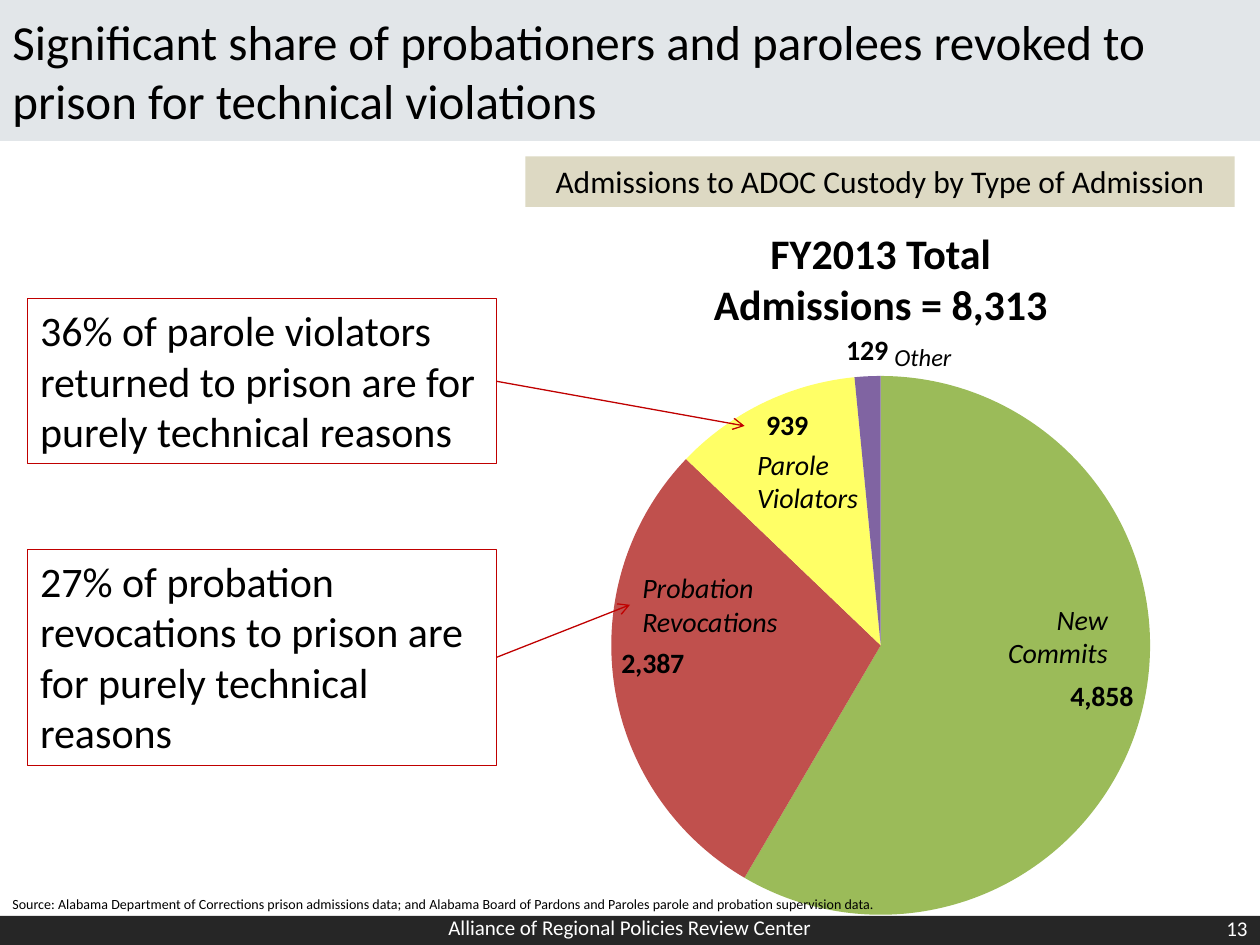
from dataclasses import dataclass
from typing import Optional

import pptx
import pptx.chart.data
import pptx.dml.color
import pptx.enum.chart
import pptx.enum.shapes
import pptx.enum.text
import pptx.oxml
import pptx.oxml.ns
import pptx.util

Pt = pptx.util.Pt
ALIGN = pptx.enum.text.PP_ALIGN
ANCHOR = pptx.enum.text.MSO_ANCHOR
LABEL = pptx.enum.chart.XL_LABEL_POSITION

FONT = "Calibri"
BLACK, WHITE, RED = "000000", "FFFFFF", "C00000"


@dataclass
class Block:
    text: str
    left: float
    top: float
    width: float
    height: float
    size: float
    color: str = BLACK
    bold: bool = False
    italic: bool = False
    align: ALIGN = ALIGN.LEFT
    anchor: ANCHOR = ANCHOR.TOP
    fill: Optional[str] = None
    line: Optional[str] = None
    grow: bool = True
    space_after: float = 0


@dataclass
class Callout:
    block: Block
    tip_x: float
    tip_y: float


@dataclass
class Slice:
    value: int
    color: str
    position: LABEL = LABEL.INSIDE_END


def rgb(color: str) -> pptx.dml.color.RGBColor:
    return pptx.dml.color.RGBColor.from_string(color)


def add_rectangle(page, left: float, top: float, width: float, height: float,
                  fill: Optional[str], line: Optional[str] = None):
    box = page.shapes.add_shape(pptx.enum.shapes.MSO_SHAPE.RECTANGLE,
                                Pt(left), Pt(top), Pt(width), Pt(height))
    box.shadow.inherit = False
    if fill:
        box.fill.solid()
        box.fill.fore_color.rgb = rgb(fill)
    else:
        box.fill.background()
    if line:
        box.line.color.rgb = rgb(line)
        box.line.width = Pt(0.75)
    else:
        box.line.fill.background()
    return box


def style_font(font, size: float, color: str, bold: bool, italic: bool = False) -> None:
    font.name = FONT
    font.size = Pt(size)
    font.bold = bold
    font.italic = italic
    font.color.rgb = rgb(color)


def add_block(page, block: Block):
    place = (block.left, block.top, block.width, block.height)
    if block.fill or block.line:
        box = add_rectangle(page, *place, block.fill, block.line)
    else:
        box = page.shapes.add_textbox(*(Pt(length) for length in place))
    frame = box.text_frame
    frame.word_wrap = True
    frame.vertical_anchor = block.anchor
    sizes = pptx.enum.text.MSO_AUTO_SIZE
    frame.auto_size = sizes.SHAPE_TO_FIT_TEXT if block.grow else sizes.NONE
    para = frame.paragraphs[0]
    para.text = block.text
    para.alignment = block.align
    para.space_after = Pt(block.space_after)
    style_font(para.font, block.size, block.color, block.bold, block.italic)
    return box


def add_callout(page, callout: Callout) -> None:
    box = add_block(page, callout.block)
    arrow = page.shapes.add_connector(
        pptx.enum.shapes.MSO_CONNECTOR.STRAIGHT, 0, 0,
        Pt(callout.tip_x), Pt(callout.tip_y))
    arrow.begin_connect(box, 3)
    arrow.line.color.rgb = rgb(RED)
    arrow.line.width = Pt(0.75)
    arrow.line._get_or_add_ln().append(pptx.oxml.parse_xml(
        f'<a:tailEnd {pptx.oxml.ns.nsdecls("a")} type="arrow"/>'))
    arrow._element.spPr.append(pptx.oxml.parse_xml(
        f'<a:effectLst {pptx.oxml.ns.nsdecls("a")}/>'))


def add_pie(page, slices: list[Slice]) -> None:
    data = pptx.chart.data.CategoryChartData(number_format="#,##0")
    data.categories = [str(number) for number in range(1, len(slices) + 1)]
    data.add_series("Series 1", [item.value for item in slices])
    chart = page.shapes.add_chart(
        pptx.enum.chart.XL_CHART_TYPE.PIE,
        Pt(328.3), Pt(182.2), Pt(349.9), Pt(352.1), data).chart
    chart.has_legend = False
    chart.has_title = False
    style_font(chart.font, 18, BLACK, False)
    plot = chart.plots[0]
    plot.vary_by_categories = True
    series = plot.series[0]
    labels = series.data_labels
    labels.show_value = True
    labels.number_format = "#,##0"
    labels.number_format_is_linked = False
    labels.position = LABEL.INSIDE_END
    style_font(labels.font, 16, BLACK, True)
    for index, item in enumerate(slices):
        point = series.points[index]
        point.format.fill.solid()
        point.format.fill.fore_color.rgb = rgb(item.color)
        if item.position != LABEL.INSIDE_END:
            point.data_label.position = item.position
            style_font(point.data_label.font, 16, BLACK, True)

    # Fixed plot area, as fractions of the chart frame
    area = chart._chartSpace.chart.plotArea
    for old in area.findall(pptx.oxml.ns.qn("c:layout")):
        area.remove(old)
    area.insert(0, pptx.oxml.parse_xml(
        f'<c:layout {pptx.oxml.ns.nsdecls("c")}><c:manualLayout>'
        '<c:layoutTarget val="inner"/><c:xMode val="edge"/><c:yMode val="edge"/>'
        '<c:x val="0.06"/><c:y val="0.09"/><c:w val="0.88"/><c:h val="0.88"/>'
        '</c:manualLayout></c:layout>'))


SLICES = [
    Slice(4858, "9BBB59"),
    Slice(2387, "C0504D"),
    Slice(939, "FFFF66"),
    Slice(129, "8064A2", LABEL.OUTSIDE_END),
]
HEADINGS = [
    Block("Significant share of probationers and parolees revoked to prison "
          "for technical violations", 0, 0, 720, 80.6, 28,
          anchor=ANCHOR.MIDDLE, fill="E2E6E9", grow=False),
    Block("13", 552, 516.2, 168, 28.8, 12, WHITE, align=ALIGN.RIGHT,
          anchor=ANCHOR.MIDDLE, grow=False),
    Block("Admissions to ADOC Custody by Type of Admission",
          300.2, 89.3, 405.4, 29, 18, align=ALIGN.CENTER, fill="DDD9C3"),
]
CHART_NOTES = [
    Block("New Commits", 557.3, 340.6, 82.8, 46, 16, italic=True, align=ALIGN.RIGHT),
    Block("Probation Revocations", 360, 322.6, 113, 46, 16, italic=True),
    Block("Parole Violators", 425.5, 252, 82.8, 46, 16, italic=True),
    Block("Other", 504, 192.2, 82.8, 24.2, 14, italic=True),
    Block("FY2013 Total Admissions = 8,313", 385.2, 126.7, 236.2, 65.4, 24,
          bold=True, align=ALIGN.CENTER),
    Block("Source: Alabama Department of Corrections prison admissions data; and "
          "Alabama Board of Pardons and Paroles parole and probation supervision "
          "data.", 0, 508.3, 720, 15.8, 8, grow=False, space_after=2),
]
CALLOUTS = [
    Callout(Block("36% of parole violators returned to prison are for purely "
                  "technical reasons", 15.8, 170.6, 267.8, 94.5, 24, line=RED),
            425.5, 243.4),
    Callout(Block("27% of probation revocations to prison are for purely "
                  "technical reasons", 15.8, 313.9, 267.8, 123.6, 24, line=RED),
            360, 345.6),
]
FOOTER = Block("Alliance of Regional Policies Review Center", 231.8, 514.8, 256.3,
               30.2, 12, WHITE, align=ALIGN.CENTER, anchor=ANCHOR.MIDDLE, grow=False)


def main() -> None:
    deck = pptx.Presentation()
    deck.slide_width, deck.slide_height = Pt(720), Pt(540)
    page = deck.slides.add_slide(deck.slide_layouts[6])

    # Footer bar and headings
    add_rectangle(page, 0, 523.4, 720, 16.6, "262626")
    for block in HEADINGS:
        add_block(page, block)

    # Pie chart with its notes
    add_pie(page, SLICES)
    for block in CHART_NOTES:
        add_block(page, block)

    # Callouts pointing into the pie
    for callout in CALLOUTS:
        add_callout(page, callout)

    # Footer text
    add_block(page, FOOTER)
    deck.save("out.pptx")


if __name__ == "__main__":
    main()
